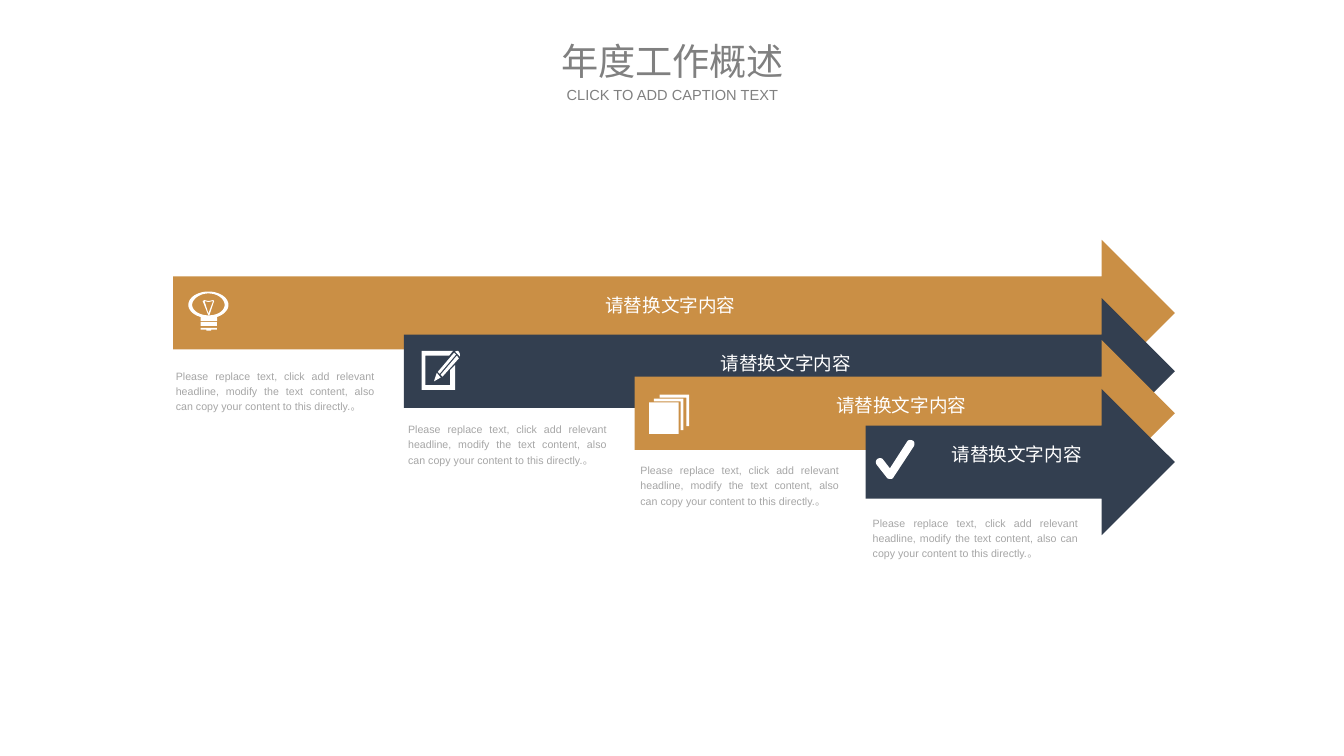
"""Build the annual work overview slide with four stepped arrows."""
from dataclasses import dataclass

from pptx import Presentation
from pptx.dml.color import RGBColor
from pptx.enum.shapes import MSO_SHAPE
from pptx.enum.text import MSO_ANCHOR, PP_ALIGN
from pptx.util import Inches, Pt


@dataclass(frozen=True)
class Theme:
    font: str = "Arial"
    gold: RGBColor = RGBColor(0xCA, 0x8F, 0x45)
    navy: RGBColor = RGBColor(0x33, 0x3F, 0x50)
    white: RGBColor = RGBColor(0xFF, 0xFF, 0xFF)
    heading: RGBColor = RGBColor(0x80, 0x80, 0x80)
    body: RGBColor = RGBColor(0xA6, 0xA6, 0xA6)
    title_size: int = 28
    subtitle_size: int = 11
    label_size: int = 14
    body_size: int = 8


theme = Theme()


def set_text(sp, text, *, size, color, align=PP_ALIGN.CENTER,
             anchor=MSO_ANCHOR.MIDDLE, spacing=1.0, insets=(0, 0, 0, 0)):
    tf = sp.text_frame
    tf.word_wrap = True
    tf.vertical_anchor = anchor
    tf.margin_left, tf.margin_top, tf.margin_right, tf.margin_bottom = map(Inches, insets)
    p = tf.paragraphs[0]
    p.alignment = align
    p.line_spacing = spacing
    r = p.add_run()
    r.text = text
    r.font.name = theme.font
    r.font.size = Pt(size)
    r.font.color.rgb = color


def add_outline(shapes, loops, steps=10):
    builder = None
    for loop in loops:
        pts = []
        for node in loop:
            if len(node) == 6:
                a, b, c, d = pts[-1], node[:2], node[2:4], node[4:]
                for t in (k / steps for k in range(1, steps + 1)):
                    u = 1 - t
                    pts.append(tuple(u**3 * a[j] + 3 * u * u * t * b[j]
                                     + 3 * u * t * t * c[j] + t**3 * d[j] for j in (0, 1)))
            else:
                pts.append(node)
        emu = [(Inches(x), Inches(y)) for x, y in pts]
        if builder is None:
            builder = shapes.build_freeform(*emu[0], scale=1.0)
        else:
            builder.move_to(*emu[0])
        builder.add_line_segments(emu[1:], close=True)
    return builder.convert_to_shape()


prs = Presentation()
prs.slide_width, prs.slide_height = Inches(14.06), Inches(7.91)
s = prs.slides.add_slide(prs.slide_layouts[6])

headings = [
    ("年度工作概述", 0.39, 0.49, theme.title_size),
    ("CLICK TO ADD CAPTION TEXT", 0.9, 0.19, theme.subtitle_size),
]
for text, top, height, size in headings:
    sp = s.shapes.add_textbox(Inches(5.77), Inches(top), Inches(2.53), Inches(height))
    set_text(sp, text, size=size, color=theme.heading)

label = "请替换文字内容"
caption = ("Please replace text, click add relevant headline, modify the text content, "
           "also can copy your content to this directly.。")
arrow_tip = 12.29
steps = [
    (2.51, 3.79, 2.3, theme.gold),
    (3.12, 4.35, 2.3, theme.navy),
    (3.56, 4.78, 2.3, theme.gold),
    (4.07, 5.33, 2.37, theme.navy),
]
for i, (arrow_top, caption_top, caption_width, color) in enumerate(steps):
    sp = s.shapes.add_textbox(Inches(1.73 + 2.43 * i), Inches(caption_top),
                              Inches(caption_width), Inches(0.58))
    set_text(sp, caption, size=theme.body_size, color=theme.body, align=PP_ALIGN.JUSTIFY,
             anchor=MSO_ANCHOR.TOP, spacing=1.2, insets=(0.11, 0.05, 0.11, 0.05))

    left = 1.81 + 2.415 * i
    sp = s.shapes.add_shape(MSO_SHAPE.RIGHT_ARROW, Inches(left), Inches(arrow_top),
                            Inches(arrow_tip - left), Inches(1.53))
    sp.shadow.inherit = False
    sp.fill.solid()
    sp.fill.fore_color.rgb = color
    sp.line.fill.background()
    set_text(sp, label, size=theme.label_size, color=theme.white, spacing=1.2,
             insets=(0.59, 0.03, 0.28, 0.24))

bulb = [
    [[(2.39, 3.19), (2.39, 3.11, 2.29, 3.05, 2.18, 3.05), (2.07, 3.05, 1.97, 3.11, 1.97, 3.19),
      (1.97, 3.25, 2.03, 3.3, 2.11, 3.32), (2.1, 3.32), (2.1, 3.36), (2.27, 3.36),
      (2.27, 3.32), (2.26, 3.32), (2.33, 3.3, 2.39, 3.25, 2.39, 3.19)],
     [(2.18, 3.3), (2.09, 3.3, 2.01, 3.25, 2.01, 3.19), (2.01, 3.13, 2.09, 3.07, 2.18, 3.07),
      (2.28, 3.07, 2.35, 3.13, 2.35, 3.19), (2.35, 3.25, 2.28, 3.3, 2.18, 3.3)]],
    [[(2.1, 3.43), (2.27, 3.43), (2.27, 3.45), (2.21, 3.45), (2.21, 3.46), (2.16, 3.46),
      (2.16, 3.45), (2.1, 3.45)]],
    [[(2.24, 3.15), (2.23, 3.14), (2.18, 3.15), (2.14, 3.14), (2.12, 3.15), (2.18, 3.3),
      (2.19, 3.3)],
     [(2.18, 3.28), (2.14, 3.15), (2.18, 3.16), (2.23, 3.15)]],
]
note = [
    [[(4.61, 3.95), (4.57, 3.9), (4.54, 3.99)]],
    [[(4.75, 3.69), (4.58, 3.89), (4.6, 3.91), (4.77, 3.71)]],
    [[(4.61, 3.92), (4.63, 3.94), (4.8, 3.75), (4.78, 3.72)]],
    [[(4.8, 3.68), (4.79, 3.66, 4.76, 3.68, 4.76, 3.68), (4.81, 3.73),
      (4.81, 3.73, 4.82, 3.71, 4.8, 3.68)]],
    [[(4.71, 4.03), (4.45, 4.03), (4.45, 3.72), (4.7, 3.72), (4.74, 3.67), (4.41, 3.67),
      (4.41, 4.08), (4.76, 4.08), (4.76, 3.82), (4.71, 3.87)]],
]
pages = [
    [[(x, y), (x + 0.31, y), (x + 0.31, y + 0.33), (x + 0.28, y + 0.33),
      (x + 0.28, y + 0.03), (x, y + 0.03)]]
    for x, y in [(6.84, 4.17), (6.9, 4.13)]
]
check = [
    [[(9.31, 5.01), (9.3, 5.01, 9.29, 5.01, 9.28, 5), (9.17, 4.86),
      (9.16, 4.84, 9.16, 4.82, 9.18, 4.8), (9.2, 4.79, 9.23, 4.79, 9.24, 4.81), (9.31, 4.9),
      (9.49, 4.62), (9.5, 4.6, 9.53, 4.6, 9.55, 4.61), (9.57, 4.62, 9.57, 4.65, 9.56, 4.67),
      (9.35, 4.99), (9.34, 5.01, 9.33, 5.01, 9.32, 5.01)]],
]
icons = [
    (bulb, [(2.1, 3.37, 0.17, 0.04)]),
    (note, []),
    (pages, [(6.79, 4.21, 0.31, 0.33)]),
    (check, []),
]
for outlines, bars in icons:
    shapes = s.shapes.add_group_shape().shapes
    parts = [add_outline(shapes, loops) for loops in outlines]
    parts += [shapes.add_shape(MSO_SHAPE.RECTANGLE, *map(Inches, bar)) for bar in bars]
    for sp in parts:
        sp.shadow.inherit = False
        sp.fill.solid()
        sp.fill.fore_color.rgb = theme.white
        sp.line.fill.background()

prs.save("out.pptx")
